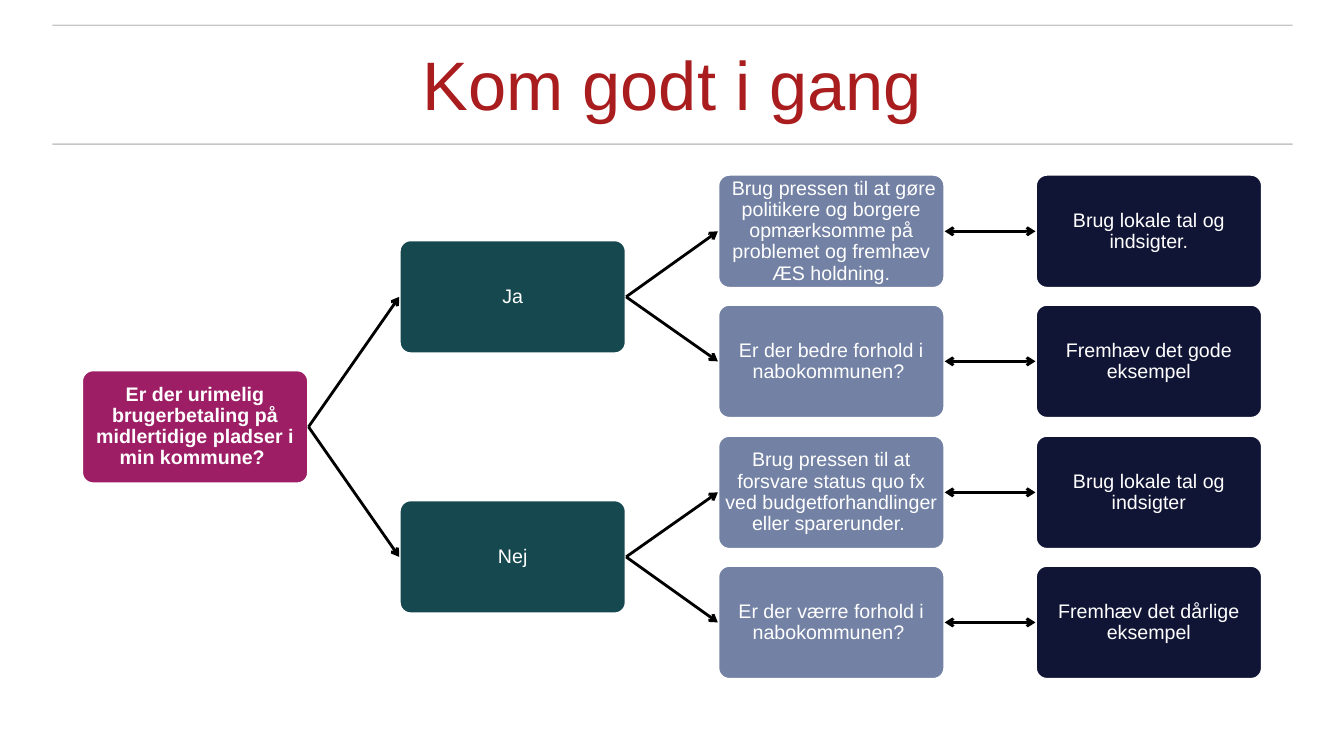
import dataclasses

import pptx
import pptx.dml.color
import pptx.enum.shapes
import pptx.enum.text
import pptx.oxml.ns
import pptx.util
import lxml.etree


@dataclasses.dataclass
class Theme:
    font: str = "Arial"
    title: str = "A91D1E"
    rule: str = "444444"
    arrow: str = "000000"
    white: str = "FFFFFF"
    fills: tuple = ("9D1E65", "15494F", "7281A4", "111535")
    head: int = 49
    body: int = 14


theme = Theme()
PX = 9144  # EMU, 100 px to the inch
RGB = pptx.dml.color.RGBColor.from_string
qn = pptx.oxml.ns.qn


def write(shape, text, size, color, bold=False, inset=0, space=1.0):
    frame = shape.text_frame
    frame.word_wrap = True
    frame.vertical_anchor = pptx.enum.text.MSO_ANCHOR.MIDDLE
    frame.margin_left = frame.margin_right = inset * PX
    frame.margin_top = frame.margin_bottom = inset * PX
    para = frame.paragraphs[0]
    para.text = text
    para.alignment = pptx.enum.text.PP_ALIGN.CENTER
    para.line_spacing = space
    font = para.font
    font.name, font.size, font.bold = theme.font, pptx.util.Pt(size), bold
    font.color.rgb = RGB(color)


def draw(start, end, color, width):
    """Add a straight line without a shadow."""
    kind = pptx.enum.shapes.MSO_CONNECTOR.STRAIGHT
    line = slide.shapes.add_connector(kind, *[n * PX for n in (*start, *end)])
    line.line.color.rgb = RGB(color)
    line.line.width = pptx.util.Pt(width)
    lxml.etree.SubElement(line._element.spPr, qn("a:effectLst"))
    return line


deck = pptx.Presentation()
deck.slide_width, deck.slide_height = 1333 * PX, 750 * PX
slide = deck.slides.add_slide(deck.slide_layouts[6])

# Title between two pale rules
for y in (143, 25):
    rule = draw((52, y), (1282, y), theme.rule, 1)
    tint = rule.line._ln.find(".//" + qn("a:srgbClr"))
    lxml.etree.SubElement(tint, qn("a:alpha"), val="30000")

title = slide.shapes.add_textbox(53 * PX, 29 * PX, 1228 * PX, 106 * PX)
write(title, "Kom godt i gang", theme.head, theme.title)

# Decision tree: column, row, parent, text
LEFT, TOP, WIDE, HIGH = 81, 173, 225, 113
SPAN_X, SPAN_Y = 946, 388  # first to last of four columns and rows
nodes = [
    (0, 1.5, None, "Er der urimelig brugerbetaling på midlertidige pladser i min kommune? "),
    (1, 0.5, 0, "Ja"),
    (1, 2.5, 0, "Nej"),
    (2, 0, 1, " Brug pressen til at gøre politikere og borgere opmærksomme på "
              "problemet og fremhæv ÆS holdning."),
    (2, 1, 1, "Er der bedre forhold i nabokommunen? "),
    (2, 2, 2, "Brug pressen til at forsvare status quo fx ved "
              "budgetforhandlinger eller sparerunder. "),
    (2, 3, 2, "Er der værre forhold i nabokommunen? "),
    (3, 0, 3, "Brug lokale tal og indsigter."),
    (3, 1, 4, "Fremhæv det gode eksempel"),
    (3, 2, 5, "Brug lokale tal og indsigter"),
    (3, 3, 6, "Fremhæv det dårlige eksempel"),
]

boxes = []
for col, row, parent, text in nodes:
    x = LEFT + round(col * SPAN_X / 3)
    y = TOP + round(row * SPAN_Y / 3)
    box = slide.shapes.add_shape(
        pptx.enum.shapes.MSO_SHAPE.ROUNDED_RECTANGLE,
        x * PX, y * PX, WIDE * PX, HIGH * PX)
    box.adjustments[0] = 0.1
    box.shadow.inherit = False
    box.fill.solid()
    box.fill.fore_color.rgb = RGB(theme.fills[col])
    box.line.color.rgb = RGB(theme.white)
    box.line.width = pptx.util.Pt(2)
    write(box, text, theme.body, theme.white, bold=col == 0, inset=4, space=0.9)
    boxes.append(box)

    if parent is not None:
        link = draw((0, 0), (0, 0), theme.arrow, 2)
        link.begin_connect(boxes[parent], 3)
        link.end_connect(box, 1)
        tips = ("a:headEnd", "a:tailEnd") if col == 3 else ("a:tailEnd",)
        for tip in tips:
            lxml.etree.SubElement(link.line._ln, qn(tip), type="arrow")

deck.save("out.pptx")
